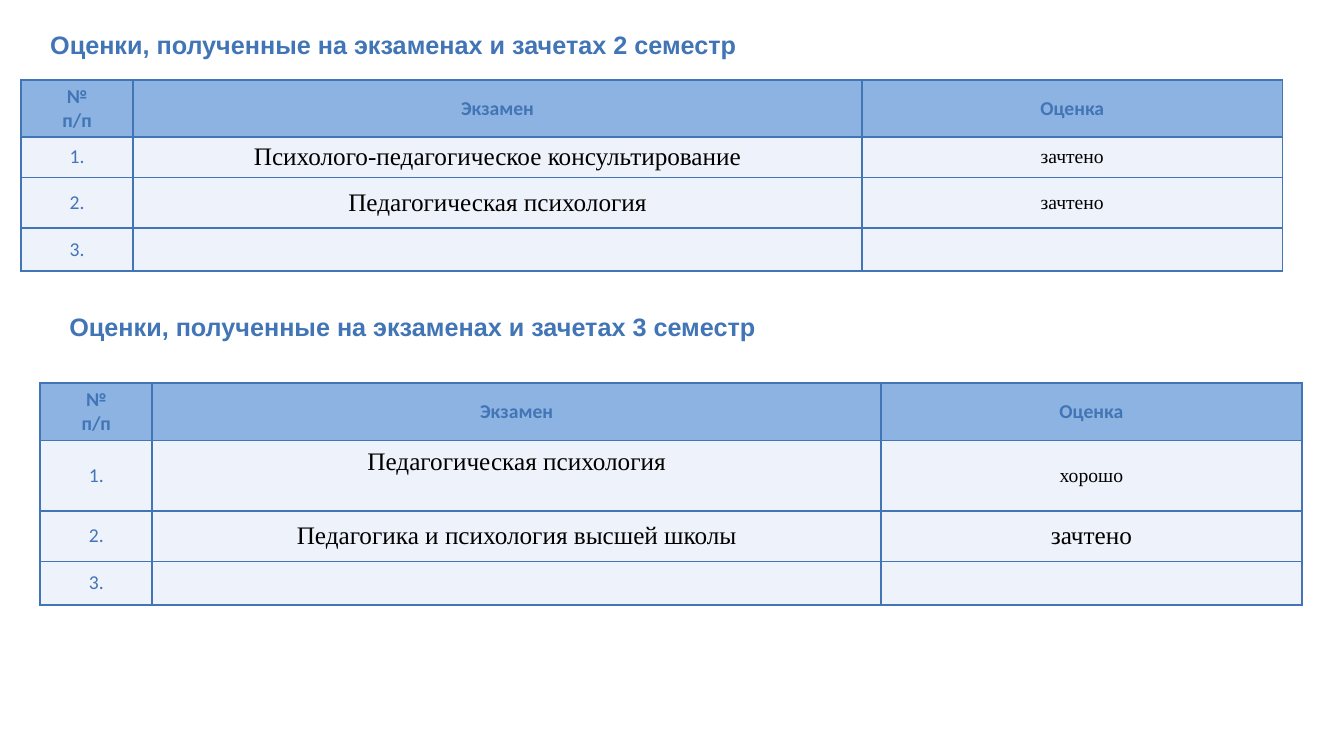
from lxml.etree import SubElement
from pptx import Presentation
from pptx.dml.color import RGBColor
from pptx.enum.text import MSO_ANCHOR, PP_ALIGN
from pptx.oxml.ns import qn
from pptx.util import Inches, Pt

BLUE, HEADER_FILL, ROW_FILL, BLACK = "4175B5", "8DB3E2", "EEF2FA", "000000"
COLUMNS = [1.11, 7.23, 4.17]
HEADINGS = ["№\nп/п", "Экзамен", "Оценка"]


def color(hex_code):
    return RGBColor.from_string(hex_code)


def write(frame, text, *, size=14, font="Calibri", ink=BLUE, bold=False,
          align=PP_ALIGN.CENTER):
    frame.text = text
    for paragraph in frame.paragraphs:
        paragraph.alignment = align
        for run in paragraph.runs:
            run.font.size = Pt(size)
            run.font.name = font
            run.font.bold = bold
            run.font.color.rgb = color(ink)


prs = Presentation()
prs.slide_width, prs.slide_height = Inches(13.33), Inches(7.5)
slide = prs.slides.add_slide(prs.slide_layouts[6])

# Each term: title, title box, table corner, row heights,
# (exam, grade, grade size) entries
terms = [
    ("Оценки, полученные на экзаменах и зачетах 2 семестр",
     (0.4, 0.24, 9.03, 0.4), (0.21, 0.79), [0.57, 0.4, 0.5, 0.43],
     [("Психолого-педагогическое консультирование", "зачтено", 14),
      ("Педагогическая психология", "зачтено", 14),
      ("", "", 14)]),
    ("Оценки, полученные на экзаменах и зачетах 3 семестр",
     (0.59, 3.04, 7.54, 0.4), (0.4, 3.8), [0.57, 0.7, 0.5, 0.43],
     [("Педагогическая психология", "хорошо", 14),
      ("Педагогика и психология высшей школы", "зачтено", 18),
      ("", "", 14)]),
]

for title, title_box, corner, heights, entries in terms:
    # Term title
    heading = slide.shapes.add_textbox(*map(Inches, title_box)).text_frame
    heading.word_wrap = True
    write(heading, title, size=18, font="Arial", bold=True, align=PP_ALIGN.LEFT)

    # Grade table
    grades = slide.shapes.add_table(
        len(heights), len(COLUMNS), *map(Inches, corner),
        Inches(sum(COLUMNS)), Inches(sum(heights))).table
    for column, width in zip(grades.columns, COLUMNS):
        column.width = Inches(width)
    for row, height in zip(grades.rows, heights):
        row.height = Inches(height)

    # Borders and fills
    for index, row in enumerate(grades.rows):
        for cell in row.cells:
            cell.vertical_anchor = MSO_ANCHOR.MIDDLE
            properties = cell._tc.get_or_add_tcPr()
            for side in ("a:lnL", "a:lnR", "a:lnT", "a:lnB"):
                border = SubElement(properties, qn(side), w=str(Pt(1.5)))
                paint = SubElement(border, qn("a:solidFill"))
                SubElement(paint, qn("a:srgbClr"), val=BLUE)
            cell.fill.solid()
            cell.fill.fore_color.rgb = color(ROW_FILL if index else HEADER_FILL)

    # Header and entries
    for position, label in enumerate(HEADINGS):
        write(grades.cell(0, position).text_frame, label, bold=True)
    for number, (exam, grade, grade_size) in enumerate(entries, start=1):
        write(grades.cell(number, 0).text_frame, f"{number}.")
        if exam:
            write(grades.cell(number, 1).text_frame, exam,
                  size=18, font="Times New Roman", ink=BLACK)
            write(grades.cell(number, 2).text_frame, grade,
                  size=grade_size, font="Times New Roman", ink=BLACK)

# The first exam of the last term sits in the upper part of its tall row
grades.cell(1, 1).margin_bottom = Inches(0.33)

prs.save("out.pptx")
